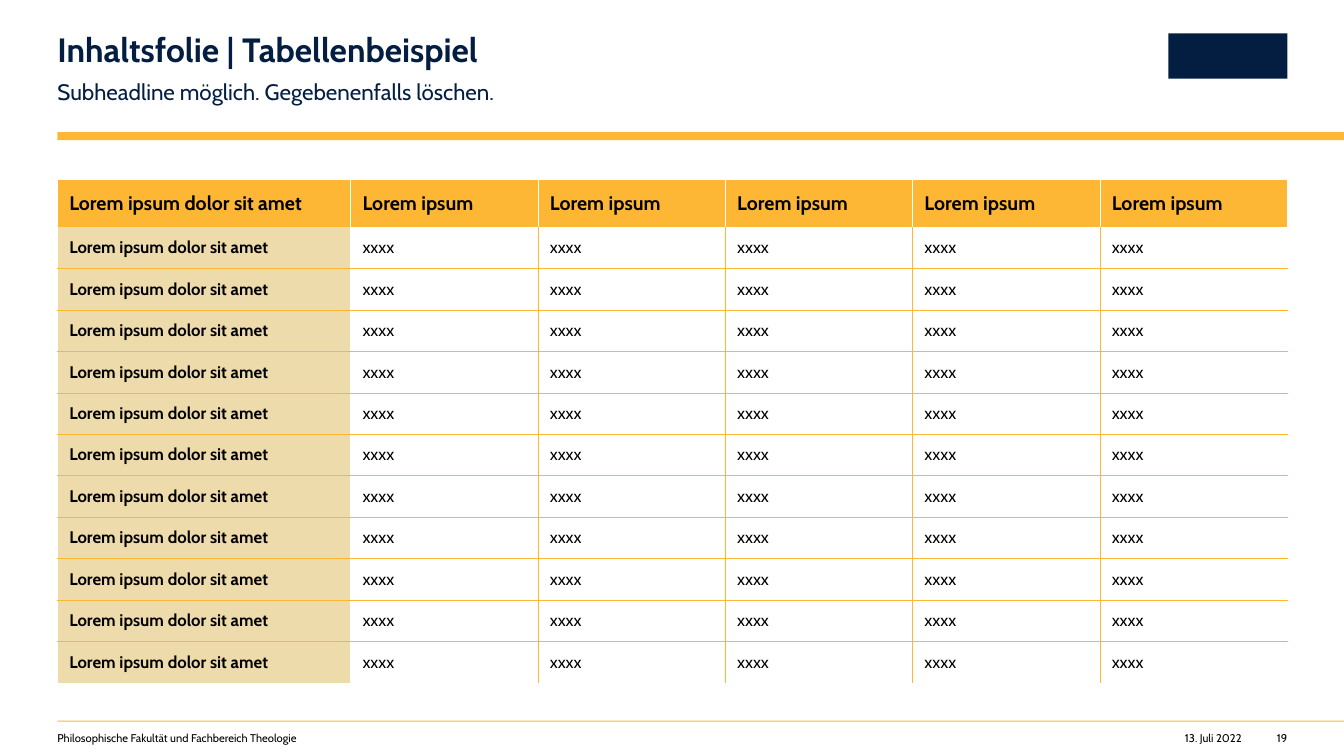
from lxml import etree
from pptx import Presentation
from pptx.dml.color import RGBColor
from pptx.enum.shapes import MSO_SHAPE
from pptx.enum.text import MSO_ANCHOR, PP_ALIGN
from pptx.oxml.ns import qn
from pptx.util import Pt

RECTANGLE = MSO_SHAPE.RECTANGLE
MIDDLE = MSO_ANCHOR.MIDDLE
LEFT, RIGHT = PP_ALIGN.LEFT, PP_ALIGN.RIGHT

NAVY = RGBColor(0x04, 0x1E, 0x42)
ORANGE = RGBColor(0xFD, 0xB7, 0x35)
SAND = RGBColor(0xEE, 0xDB, 0xAC)
WHITE = RGBColor(0xFF, 0xFF, 0xFF)
BLACK = RGBColor(0, 0, 0)

FONT = "Cabin"
SLIDE_WIDTH, SLIDE_HEIGHT = 960, 540
MARGIN = 41
FOOTER_TOP = 522.7

HEADER = ["Lorem ipsum dolor sit amet"] + ["Lorem ipsum"] * 5
BODY_ROW = ["Lorem ipsum dolor sit amet"] + ["xxxx"] * 5
ROWS = [HEADER] + [BODY_ROW] * 11
COLUMN_WIDTHS = [209.5] + [133.8] * 5
ROW_HEIGHTS = [33.7] + [29.6] * 11

NO_LINE = (None, 0)
THIN_ORANGE = (ORANGE, 0.25)
THIN_WHITE = (WHITE, 0.5)
WIDE_WHITE = (WHITE, 1)


def style(paragraph, size, color, bold=False):
    font = paragraph.font
    font.name, font.size, font.bold = FONT, Pt(size), bold
    font.color.rgb = color


def add_border(cell, side, color, width):
    line = etree.SubElement(cell._tc.get_or_add_tcPr(), qn(f"a:ln{side}"), w=str(Pt(width)))
    if color is None:
        etree.SubElement(line, qn("a:noFill"))
    else:
        fill = etree.SubElement(line, qn("a:solidFill"))
        etree.SubElement(fill, qn("a:srgbClr"), val=str(color))


prs = Presentation()
prs.slide_width, prs.slide_height = Pt(SLIDE_WIDTH), Pt(SLIDE_HEIGHT)
slide = prs.slides.add_slide(prs.slide_layouts[6])

# Header rule, footer rule and logo placeholder
for left, top, width, height, color in [
    (MARGIN, 94.4, SLIDE_WIDTH - MARGIN, 5.7, ORANGE),
    (MARGIN, 514.8, SLIDE_WIDTH - MARGIN, 0.7, ORANGE),
    (834.5, 23.8, 85, 32.4, NAVY),
]:
    bar = slide.shapes.add_shape(RECTANGLE, Pt(left), Pt(top), Pt(width), Pt(height))
    bar.shadow.inherit = False
    bar.fill.solid()
    bar.fill.fore_color.rgb = color
    bar.line.fill.background()

# Headline, subheadline and footer
for text, left, top, width, height, size, color, bold, align, spacing in [
    ("Inhaltsfolie | Tabellenbeispiel", MARGIN, 23.8, 539.3, 25.9, 24, NAVY, True, LEFT, 0.9),
    ("Subheadline möglich. Gegebenenfalls löschen.", MARGIN, 54, 539.3, 19.4, 16, NAVY, False, LEFT, 1.1),
    ("Philosophische Fakultät und Fachbereich Theologie", MARGIN, FOOTER_TOP, 430.6, 9.4, 8, BLACK, False, LEFT, 1),
    ("13. Juli 2022", 833.8, FOOTER_TOP, 53.3, 9.4, 8, BLACK, False, RIGHT, 1),
    ("19", 909.4, FOOTER_TOP, 10.1, 9.4, 8, BLACK, False, RIGHT, 1),
]:
    frame = slide.shapes.add_textbox(Pt(left), Pt(top), Pt(width), Pt(height)).text_frame
    frame.margin_left = frame.margin_top = frame.margin_right = frame.margin_bottom = 0
    frame.word_wrap = align == LEFT
    paragraph = frame.paragraphs[0]
    paragraph.text = text
    paragraph.alignment = align
    paragraph.line_spacing = spacing
    style(paragraph, size, color, bold)

# Table
table = slide.shapes.add_table(
    len(ROWS), len(HEADER), Pt(MARGIN), Pt(128.4), Pt(sum(COLUMN_WIDTHS)), Pt(sum(ROW_HEIGHTS))
).table
table.horz_banding = False
table.first_col = True
for column, width in zip(table.columns, COLUMN_WIDTHS):
    column.width = Pt(width)
for row, height in zip(table.rows, ROW_HEIGHTS):
    row.height = Pt(height)

row_edges = [WIDE_WHITE, NO_LINE] + [THIN_ORANGE] * 10 + [NO_LINE]
header_edges = [WIDE_WHITE] + [THIN_WHITE] * 5 + [WIDE_WHITE]
body_edges = [WIDE_WHITE] * 2 + [THIN_ORANGE] * 4 + [WIDE_WHITE]

for r, texts in enumerate(ROWS):
    is_header = r == 0
    column_edges = header_edges if is_header else body_edges
    for c, text in enumerate(texts):
        cell = table.cell(r, c)
        cell.text = text
        cell.vertical_anchor = MIDDLE
        cell.margin_left = cell.margin_right = Pt(8.5)
        cell.margin_top = cell.margin_bottom = Pt(2.8)
        style(cell.text_frame.paragraphs[0], 14 if is_header else 12, BLACK, is_header or c == 0)
        add_border(cell, "L", *column_edges[c])
        add_border(cell, "R", *column_edges[c + 1])
        add_border(cell, "T", *row_edges[r])
        add_border(cell, "B", *row_edges[r + 1])
        if is_header or c == 0:
            cell.fill.solid()
            cell.fill.fore_color.rgb = ORANGE if is_header else SAND
        else:
            cell.fill.background()

prs.save("out.pptx")
